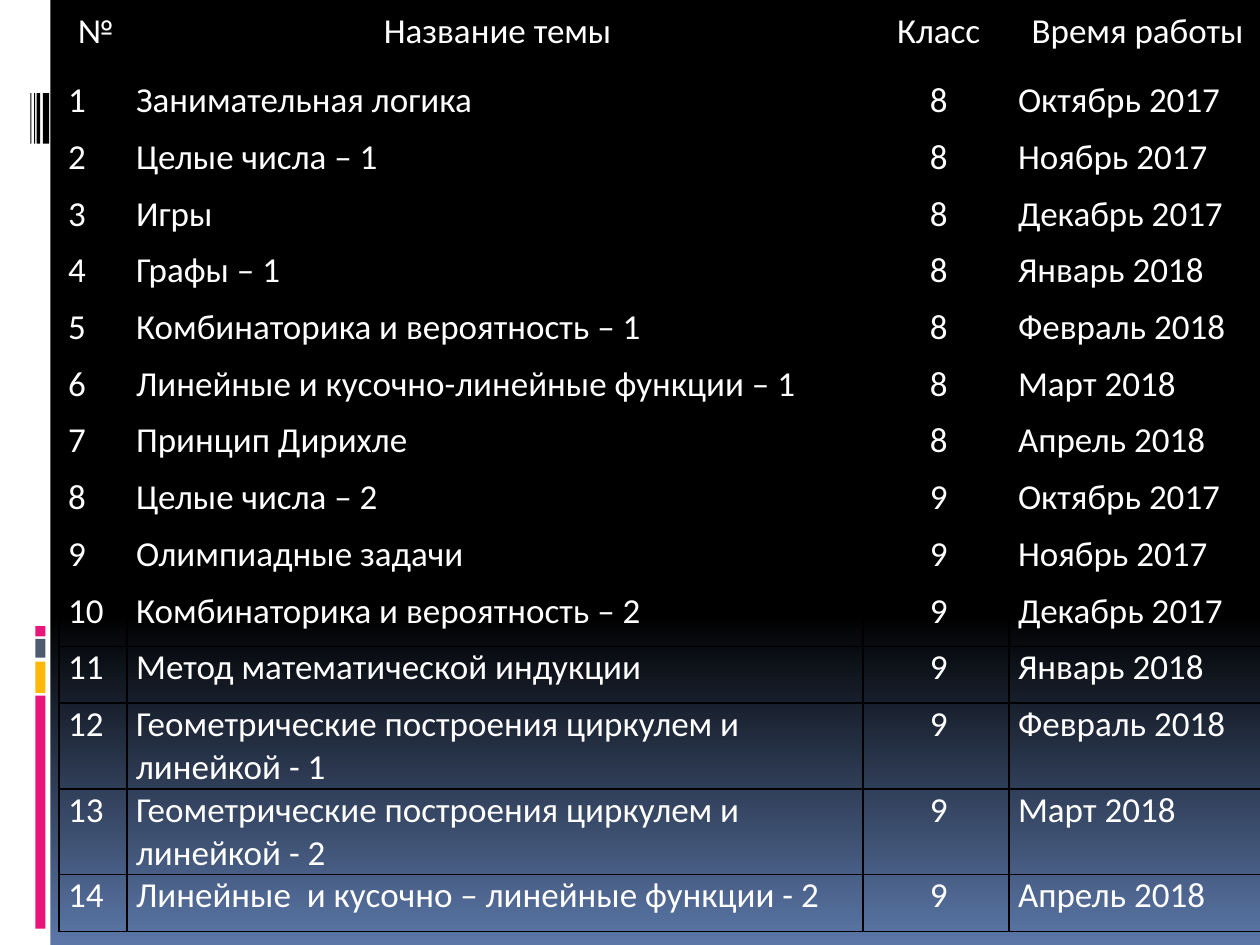
from pptx import Presentation
from pptx.util import Inches, Pt
from pptx.dml.color import RGBColor
from pptx.enum import shapes, text
from pptx.oxml import parse_xml
from pptx.oxml.ns import nsdecls

HUES = {"black": "000000", "white": "FFFFFF", "blue": "5B77A8",
        "pink": "EA157A", "gold": "FEB80A", "slate": "4E5B6F"}
FONT = {"name": "Calibri", "size": Pt(20), "bold": False}
INSET = {"margin_left": Inches(0.03), "margin_right": Inches(0.03),
         "margin_top": 0, "margin_bottom": 0}
PLAIN = {"first_row": False, "horz_banding": False}
COLS = [0.54, 5.84, 1.16, 2]
HEAD = ["№", "Название темы", "Класс", "Время работы"]
TOPICS = ["Занимательная логика", "Целые числа – 1", "Игры", "Графы – 1",
          "Комбинаторика и вероятность – 1",
          "Линейные и кусочно-линейные функции – 1", "Принцип Дирихле",
          "Целые числа – 2", "Олимпиадные задачи",
          "Комбинаторика и вероятность – 2", "Метод математической индукции",
          "Геометрические построения циркулем и линейкой - 1",
          "Геометрические построения циркулем и линейкой - 2",
          "Линейные  и кусочно – линейные функции - 2"]
MONTHS = ["Октябрь 2017", "Ноябрь 2017", "Декабрь 2017", "Январь 2018",
          "Февраль 2018", "Март 2018", "Апрель 2018"]
GRADES = [8, 9]


def color(name):
    return RGBColor.from_string(HUES[name])


def apply(item, values):
    for key, value in values.items():
        setattr(item, key, value)


def add_bar(slide, x, y, w, h, hue):
    bar = slide.shapes.add_shape(shapes.MSO_SHAPE.RECTANGLE,
                                 Inches(x), Inches(y), Inches(w), Inches(h))
    bar.shadow.inherit = False
    bar.fill.solid()
    bar.fill.fore_color.rgb = color(hue)
    bar.line.fill.background()


def add_backdrop(slide):
    fill = slide.background.fill
    fill.gradient()
    fill.gradient_angle = 270
    for stop, place, hue in zip(fill.gradient_stops, (0.65, 1), ("black", "blue")):
        stop.position = place
        stop.color.rgb = color(hue)


def add_strip(slide, x, y, w, h):
    """White side band with a coloured stack and a group of thin stripes."""
    add_bar(slide, x, y, w, h, "white")
    for top, size, hue in [(5.52, 1.85, "pink"), (5.25, 0.25, "gold"),
                           (5.07, 0.15, "slate"), (4.97, 0.08, "pink")]:
        add_bar(slide, x + 0.28, y + top, 0.08, size, hue)
    for left, wide in [(0.34, 0.05), (0.29, 0.03), (0.27, 0.01), (0.24, 0.01)]:
        add_bar(slide, x + left, y + 0.74, wide, 0.4, "black")


def add_edges(cell):
    props = cell._tc.get_or_add_tcPr()
    for spot, side in enumerate(("lnL", "lnR", "lnT", "lnB")):
        props.insert(spot, parse_xml(
            f'<a:{side} {nsdecls("a")} w="{Pt(1)}"><a:solidFill>'
            f'<a:srgbClr val="{HUES["black"]}"/></a:solidFill></a:{side}>'))


def fill_cell(cell, words, align):
    cell.fill.background()
    apply(cell, INSET)
    add_edges(cell)
    para = cell.text_frame.paragraphs[0]
    para.alignment = align
    props = para._p.get_or_add_pPr()
    props.set("marL", str(Inches(0.04)))
    props.set("indent", "0")
    run = para.add_run()
    run.text = words
    apply(run.font, FONT)
    run.font.color.rgb = color("white")


def add_plan(slide, x, y, w, h):
    size = len(MONTHS)
    rows = [HEAD] + [[str(n + 1), topic, str(GRADES[n // size]), MONTHS[n % size]]
                     for n, topic in enumerate(TOPICS)]
    table = slide.shapes.add_table(len(rows), len(COLS), Inches(x), Inches(y),
                                   Inches(w), Inches(h)).table
    apply(table, PLAIN)
    for col, wide in zip(table.columns, COLS):
        col.width = Inches(wide)
    kinds = text.PP_ALIGN
    for r, row in enumerate(rows):
        tall = 0.68 if len(row[1]) > 45 else 0.45
        table.rows[r].height = Inches(tall if r else 0.55)
        for c, words in enumerate(row):
            mid = r == 0 or c == 2
            side = kinds.LEFT if c == 1 and r > size else kinds.JUSTIFY
            fill_cell(table.cell(r, c), words, kinds.CENTER if mid else side)


def main():
    deck = Presentation()
    deck.slide_width, deck.slide_height = Inches(10), Inches(7.5)
    slide = deck.slides.add_slide(deck.slide_layouts[6])
    add_backdrop(slide)
    add_strip(slide, 0, 0, 0.4, 7.5)
    add_plan(slide, 0.47, 0.08, 9.53, 7.33)
    deck.save("out.pptx")


if __name__ == "__main__":
    main()
